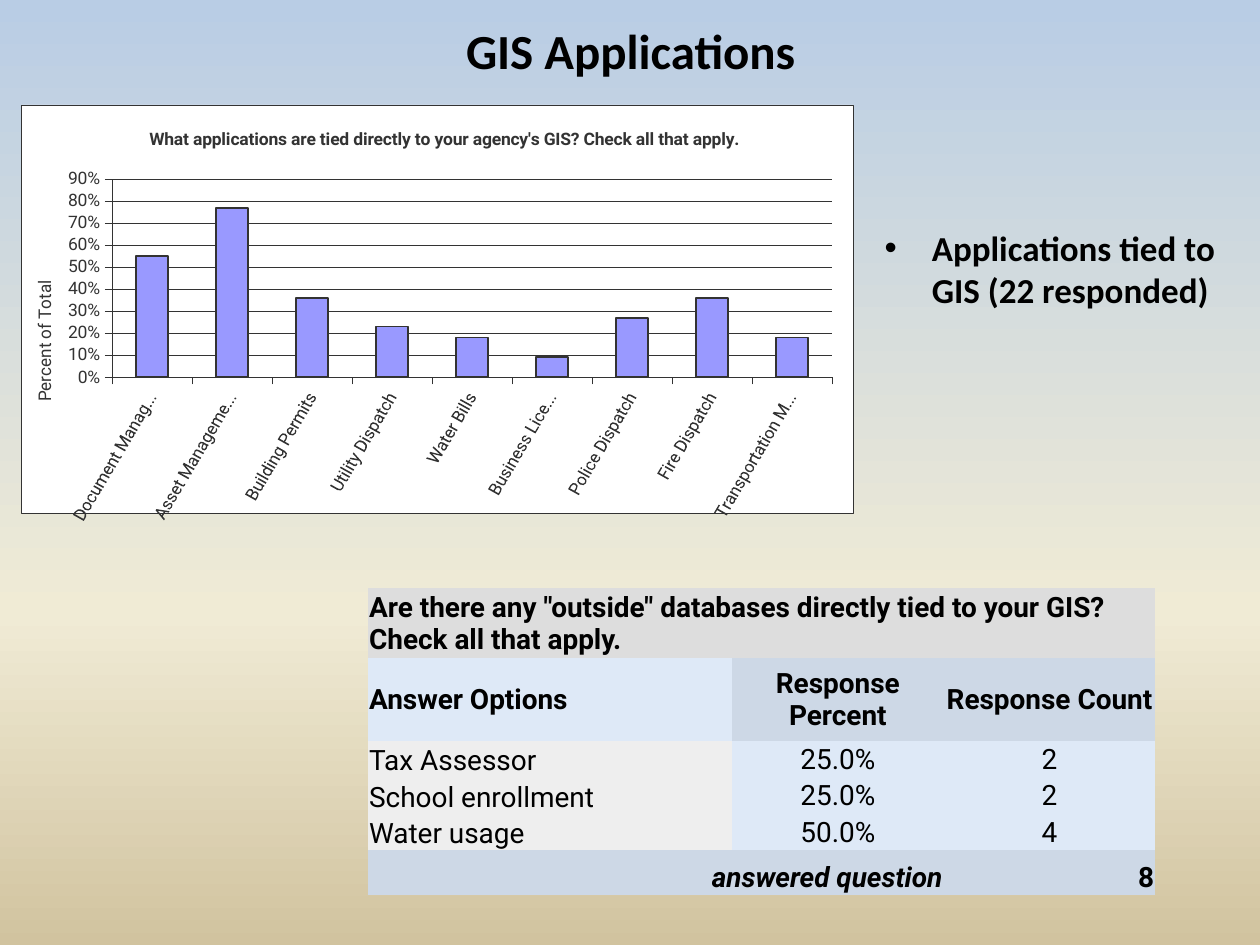
"""Build a slide on GIS applications with a column chart and a survey table."""
from copy import deepcopy
from dataclasses import dataclass

from lxml.etree import SubElement
from pptx import Presentation
from pptx.chart.data import CategoryChartData
from pptx.dml.color import RGBColor
from pptx.enum.chart import XL_CHART_TYPE as ChartType, XL_TICK_MARK as Tick
from pptx.enum.text import MSO_ANCHOR as Anchor, PP_ALIGN as Align
from pptx.oxml import parse_xml
from pptx.oxml.ns import nsdecls, qn
from pptx.util import Inches, Pt


@dataclass(frozen=True)
class Theme:
    """Colours, fonts and type sizes of the slide."""
    black: str = "000000"
    white: str = "FFFFFF"
    ink: str = "333333"
    column: str = "9999FF"
    grey: str = "DDDDDD"
    pale_grey: str = "EEEEEE"
    blue: str = "CDD8E6"
    pale_blue: str = "DEE9F7"
    backdrop: tuple = ((0, "B9CDE5"), (0.65, "F0EBD5"), (1, "D1C39F"))
    heading_font: str = "Calibri"
    data_font: str = "Roboto"
    title_size: int = 28
    body_size: int = 20
    table_size: int = 16
    chart_size: int = 10
    hairline: float = 0.25


THEME = Theme()
NO_GRID_STYLE = "{2D5ABB26-0587-4C30-8999-92F81FD0307C}"
APPLICATIONS = {
    "Document Management Systems": 0.55,
    "Asset Management Systems": 0.77,
    "Building Permits": 0.36,
    "Utility Dispatch": 0.23,
    "Water Bills": 0.18,
    "Business Licenses": 0.09,
    "Police Dispatch": 0.27,
    "Fire Dispatch": 0.36,
    "Transportation Modeling": 0.18,
}
DATABASES = [
    ("Tax Assessor", "25.0%", "2"),
    ("School enrollment", "25.0%", "2"),
    ("Water usage", "50.0%", "4"),
]


def style_font(font, name, size, color, bold=False, italic=False):
    """Set the face, size, colour and weight of a font."""
    font.name, font.size = name, Pt(size)
    font.bold, font.italic = bold, italic
    font.color.rgb = RGBColor.from_string(color)


def style_line(line, color, width):
    """Set the colour and width of a line."""
    line.color.rgb = RGBColor.from_string(color)
    line.width = Pt(width)


def paint_background(page):
    """Fill the page with a vertical gradient of three colours."""
    fill = page.background.fill
    fill.gradient()
    fill.gradient_angle = 270
    stop_list = page.element.xpath(".//a:gsLst")[0]
    stop_list.append(deepcopy(stop_list[-1]))
    for stop, (position, color) in zip(fill.gradient_stops, THEME.backdrop):
        stop.position = position
        stop.color.rgb = RGBColor.from_string(color)


def fill_placeholder(box, text, bounds, size):
    """Move a placeholder and give it one bold paragraph."""
    box.left, box.top, box.width, box.height = map(Inches, bounds)
    box.text_frame.text = text
    para = box.text_frame.paragraphs[0]
    style_font(para.runs[0].font, THEME.heading_font, size, THEME.black, bold=True)
    return para


def place_chart_part(part, index, **settings):
    """Give a chart part a manual layout in fractions of the chart."""
    for old in part.findall(qn("c:layout")):
        part.remove(old)
    layout = parse_xml(f"<c:layout {nsdecls('c')}><c:manualLayout/></c:layout>")
    for name, value in settings.items():
        SubElement(layout[0], qn(f"c:{name}")).set("val", str(value))
    part.insert(index, layout)


def write_chart_title(owner, text, x, y, bold=False):
    """Write and place the title of a chart or an axis."""
    frame = (owner.chart_title if hasattr(owner, "chart_title") else owner.axis_title).text_frame
    frame.text = text
    style_font(frame.paragraphs[0].runs[0].font, THEME.data_font, THEME.chart_size, THEME.ink, bold)
    title = owner.chart_title if hasattr(owner, "chart_title") else owner.axis_title
    place_chart_part(title.element, 1, xMode="edge", yMode="edge", x=x, y=y)


def style_axis(axis):
    """Set the line, ticks and labels of an axis."""
    axis.major_tick_mark = Tick.OUTSIDE
    axis.minor_tick_mark = Tick.NONE
    style_line(axis.format.line, THEME.ink, THEME.hairline)
    style_font(axis.tick_labels.font, THEME.data_font, THEME.chart_size, THEME.ink)


def frame_chart(chart):
    """Give the chart area a white fill and a thin border."""
    frame = parse_xml(
        f"<c:spPr {nsdecls('c', 'a')}>"
        f'<a:solidFill><a:srgbClr val="{THEME.white}"/></a:solidFill>'
        f'<a:ln w="{Pt(THEME.hairline)}"><a:solidFill><a:srgbClr val="{THEME.ink}"/>'
        "</a:solidFill></a:ln></c:spPr>")
    chart.element.find(qn("c:txPr")).addprevious(frame)


def add_applications_chart(page):
    """Add the column chart of applications tied to the GIS."""
    data = CategoryChartData(number_format="0%")
    data.categories = list(APPLICATIONS)
    data.add_series("Series 1", list(APPLICATIONS.values()))
    bounds = map(Inches, (0.17, 0.83, 6.6, 3.33))
    chart = page.shapes.add_chart(ChartType.COLUMN_CLUSTERED, *bounds, data).chart
    chart.has_legend = False
    style_font(chart.font, THEME.data_font, THEME.chart_size, THEME.ink)
    frame_chart(chart)
    write_chart_title(
        chart, "What applications are tied directly to your agency's GIS? Check all that apply.",
        0.15, 0.05, bold=True)

    percent_axis = chart.value_axis
    for axis in (chart.category_axis, percent_axis):
        style_axis(axis)
    write_chart_title(percent_axis, "Percent of Total", 0.01, 0.43)
    percent_axis.minimum_scale, percent_axis.maximum_scale = 0, 0.9
    percent_axis.major_unit = 0.1
    percent_axis.tick_labels.number_format = "0%"
    percent_axis.tick_labels.number_format_is_linked = False
    style_line(percent_axis.major_gridlines.format.line, THEME.ink, THEME.hairline)
    label_body = chart.element.xpath(".//c:catAx/c:txPr/a:bodyPr")[0]
    label_body.set("rot", str(-60 * 60000))
    label_body.set("vert", "horz")

    plot = chart.plots[0]
    plot.gap_width, plot.vary_by_categories = 150, False
    columns = plot.series[0].format
    columns.fill.solid()
    columns.fill.fore_color.rgb = RGBColor.from_string(THEME.column)
    style_line(columns.line, THEME.ink, 1)
    place_chart_part(
        chart.element.xpath(".//c:plotArea")[0], 0, layoutTarget="inner",
        xMode="edge", yMode="edge", x=0.109, y=0.182, w=0.866, h=0.485)


def write_cell(cell, text, fill, align=Align.LEFT, anchor=Anchor.MIDDLE, bold=False, italic=False):
    """Fill a table cell and write its text."""
    cell.fill.solid()
    cell.fill.fore_color.rgb = RGBColor.from_string(fill)
    cell.margin_left = cell.margin_right = cell.margin_top = Inches(0.01)
    cell.margin_bottom = 0
    cell.vertical_anchor = anchor
    cell.text_frame.text = text
    para = cell.text_frame.paragraphs[0]
    para.alignment = align
    style_font(para.runs[0].font, THEME.data_font, THEME.table_size, THEME.black, bold, italic)


def add_databases_table(page):
    """Add the survey table of outside databases."""
    widths = (2.89, 1.68, 1.68)
    heights = (0.55, 0.66, *[0.29] * len(DATABASES), 0.35)
    bounds = map(Inches, (2.92, 4.67, sum(widths), sum(heights)))
    table = page.shapes.add_table(len(heights), len(widths), *bounds).table
    table.first_row = table.horz_banding = False
    page.element.xpath(".//a:tableStyleId")[0].text = NO_GRID_STYLE
    for column, width in zip(table.columns, widths):
        column.width = Inches(width)
    for row, height in zip(table.rows, heights):
        row.height = Inches(height)

    total = len(heights) - 1
    table.cell(0, 0).merge(table.cell(0, 2))
    table.cell(total, 0).merge(table.cell(total, 1))
    question = 'Are there any "outside" databases directly tied to your GIS? Check all that apply.'
    write_cell(table.cell(0, 0), question, THEME.grey, bold=True)
    write_cell(table.cell(1, 0), "Answer Options", THEME.pale_blue, bold=True)
    for column, text in enumerate(("Response Percent", "Response Count"), 1):
        write_cell(table.cell(1, column), text, THEME.blue, Align.CENTER, bold=True)
    for row, (name, *figures) in enumerate(DATABASES, 2):
        write_cell(table.cell(row, 0), name, THEME.pale_grey, anchor=Anchor.BOTTOM)
        for column, text in enumerate(figures, 1):
            write_cell(table.cell(row, column), text, THEME.pale_blue, Align.CENTER)
    for column, text in ((0, "answered question"), (2, "8")):
        write_cell(table.cell(total, column), text, THEME.blue, Align.RIGHT, Anchor.BOTTOM,
                   bold=True, italic=column == 0)


def main():
    """Build and save the deck."""
    deck = Presentation()
    deck.slide_width, deck.slide_height = Inches(10), Inches(7.5)
    page = deck.slides.add_slide(deck.slide_layouts[1])
    paint_background(page)
    title, body = page.placeholders
    heading = fill_placeholder(title, "GIS Applications", (0.17, 0.08, 9.67, 0.68), THEME.title_size)
    heading.alignment, heading.line_spacing = Align.CENTER, 0.95
    fill_placeholder(body, "Applications tied to GIS (22 responded)",
                     (6.92, 1.75, 2.83, 0.83), THEME.body_size)
    add_applications_chart(page)
    add_databases_table(page)
    deck.save("out.pptx")


if __name__ == "__main__":
    main()
